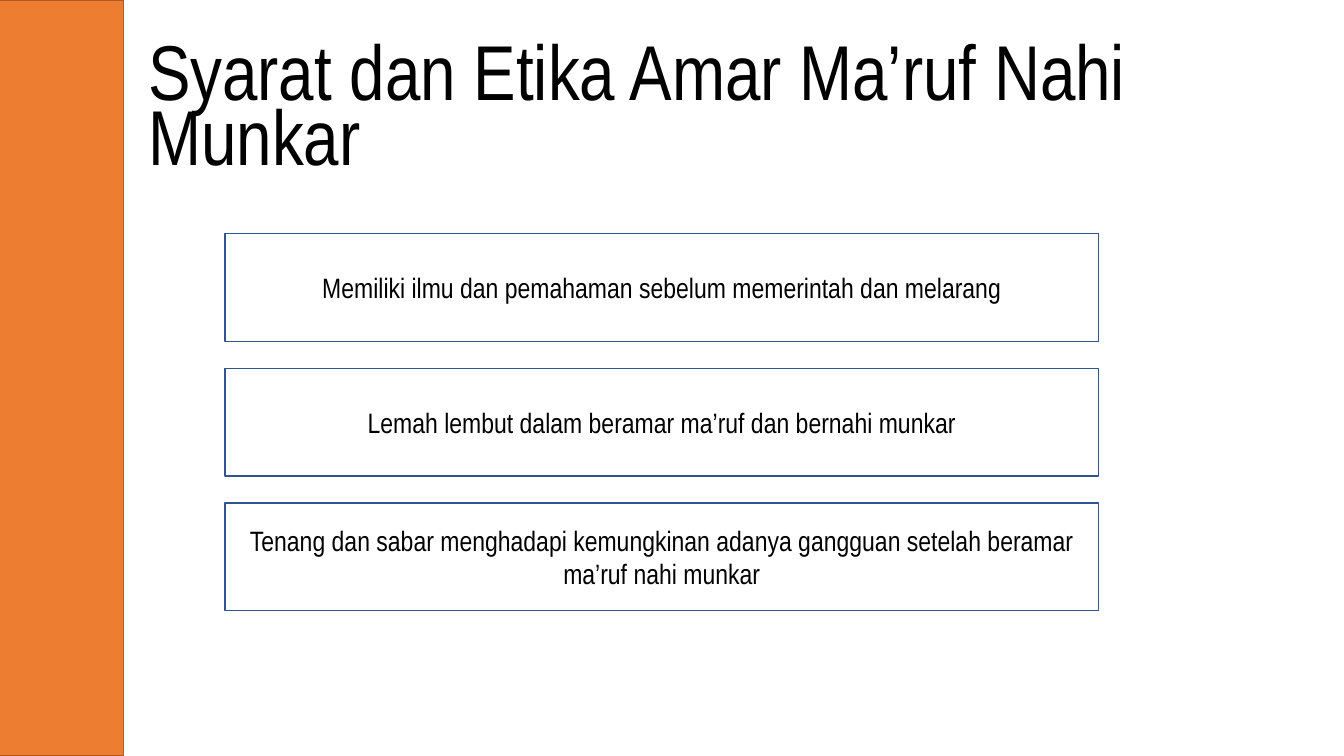
from pptx import Presentation
from pptx.dml.color import RGBColor
from pptx.enum import shapes, text
from pptx.util import Pt

FONT = "Arial Narrow"
TITLE = "Syarat dan Etika Amar Ma’ruf Nahi Munkar"
CONDITIONS = [
    "Memiliki ilmu dan pemahaman sebelum memerintah dan melarang",
    "Lemah lembut dalam beramar ma’ruf dan bernahi munkar",
    "Tenang dan sabar menghadapi kemungkinan adanya gangguan setelah beramar ma’ruf nahi munkar",
]
BOX_TOP, BOX_HEIGHT, BOX_STEP = 167, 77, 96.1


def rgb(value):
    return RGBColor.from_string(value)


def write(sp, content, size, align):
    tf = sp.text_frame
    tf.text = content
    tf.word_wrap = True
    tf.auto_size = text.MSO_AUTO_SIZE.NONE
    tf.vertical_anchor = text.MSO_ANCHOR.MIDDLE
    p = tf.paragraphs[0]
    p.alignment = align
    font = p.runs[0].font
    font.name, font.size = FONT, Pt(size)
    font.color.rgb = rgb("000000")
    return p


def add_title(slide, content):
    sp = slide.shapes.title
    sp.left, sp.top, sp.width, sp.height = Pt(98.6), Pt(28.8), Pt(795.6), Pt(104.4)
    p = write(sp, content, 55.5, text.PP_ALIGN.LEFT)
    p.line_spacing = 0.7


def add_rectangle(slide, left, top, width, height, fill, line):
    sp = slide.shapes.add_shape(shapes.MSO_SHAPE.RECTANGLE,
                                Pt(left), Pt(top), Pt(width), Pt(height))
    sp.shadow.inherit = False
    sp.fill.solid()
    sp.fill.fore_color.rgb = rgb(fill)
    sp.line.color.rgb = rgb(line)
    sp.line.width = Pt(1)
    return sp


def main():
    prs = Presentation()
    prs.slide_width, prs.slide_height = Pt(960), Pt(540)
    slide = prs.slides.add_slide(prs.slide_layouts[5])
    add_rectangle(slide, -5, 0, 93.4, 540, "ED7D31", "AF5C24")
    add_title(slide, TITLE)
    for i, condition in enumerate(CONDITIONS):
        sp = add_rectangle(slide, 160.6, BOX_TOP + i * BOX_STEP, 624.2, BOX_HEIGHT,
                           "FFFFFF", "325491")
        write(sp, condition, 20, text.PP_ALIGN.CENTER)
    prs.save("out.pptx")


if __name__ == "__main__":
    main()
